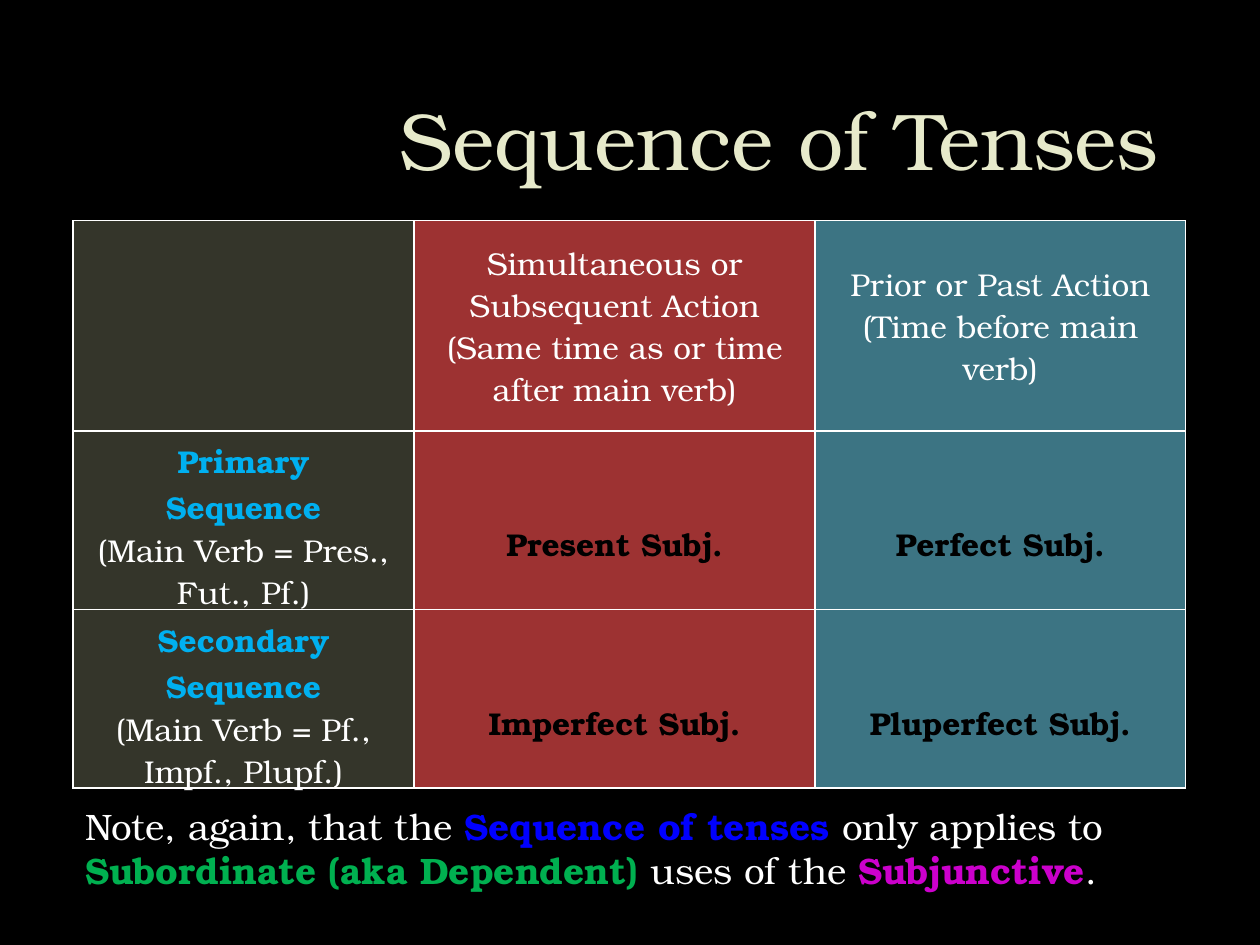
"""Build a slide with a table of the sequence of tenses."""
from dataclasses import dataclass

import pptx
import pptx.dml.color
import pptx.enum.text
import pptx.oxml
import pptx.oxml.ns
import pptx.util
from pptx.util import Cm

RGBColor = pptx.dml.color.RGBColor
Align = pptx.enum.text.PP_ALIGN
Anchor = pptx.enum.text.MSO_ANCHOR

FONT = "TeX Gyre Bonum"
BLACK = RGBColor(0x00, 0x00, 0x00)
WHITE = RGBColor(0xFF, 0xFF, 0xFF)
CREAM = RGBColor(0xE7, 0xEA, 0xCB)
OLIVE = RGBColor(0x34, 0x35, 0x2A)
RED = RGBColor(0x9D, 0x32, 0x32)
TEAL = RGBColor(0x3C, 0x74, 0x83)
SKY = RGBColor(0x00, 0xB0, 0xF0)
BLUE = RGBColor(0x00, 0x00, 0xFF)
GREEN = RGBColor(0x00, 0xB0, 0x50)
MAGENTA = RGBColor(0xCC, 0x00, 0xCC)

COLUMN_FILLS = (OLIVE, RED, TEAL)
COLUMN_WIDTHS = (Cm(6.88), Cm(8.08), Cm(7.47))
ROW_HEIGHTS = (Cm(4.24), Cm(3.6), Cm(3.6))
TENSE_TOP_MARGIN = Cm(1.05)


@dataclass(frozen=True)
class Span:
    text: str
    color: RGBColor = WHITE
    bold: bool = False


@dataclass(frozen=True)
class Sequence:
    name: str
    main_verb: str
    tenses: tuple[str, str]


HEADINGS = (
    (),
    ("Simultaneous or Subsequent Action", "(Same time as or time after main verb)"),
    ("Prior or Past Action", "(Time before main verb)"),
)
SEQUENCES = (
    Sequence("Primary", "(Main Verb = Pres., Fut., Pf.)",
             ("Present Subj.", "Perfect Subj.")),
    Sequence("Secondary", "(Main Verb = Pf., Impf., Plupf.)",
             ("Imperfect Subj.", "Pluperfect Subj.")),
)
NOTE = (
    Span("Note, again, that the "),
    Span("Sequence of tenses ", BLUE, True),
    Span("only applies to "),
    Span("Subordinate (aka Dependent)", GREEN, True),
    Span(" uses of the "),
    Span("Subjunctive", MAGENTA, True),
    Span("."),
)


def write_text(frame, lines, *, size: float, align=Align.LEFT) -> None:
    """Write each line of spans as one paragraph of the frame."""
    frame.word_wrap = True
    for index, line in enumerate(lines):
        para = frame.add_paragraph() if index else frame.paragraphs[0]
        para.alignment = align
        for span in line:
            run = para.add_run()
            run.text = span.text
            run.font.name = FONT
            run.font.size = pptx.util.Pt(size)
            run.font.bold = span.bold
            run.font.color.rgb = span.color


def add_text(page, lines, *, left: Cm, top: Cm, width: Cm, height: Cm,
             size: float, align=Align.LEFT, anchor=Anchor.TOP) -> None:
    """Add a text box with formatted lines."""
    box = page.shapes.add_textbox(left, top, width, height)
    box.text_frame.vertical_anchor = anchor
    write_text(box.text_frame, lines, size=size, align=align)


def format_cell(cell, lines, fill: RGBColor) -> None:
    """Give a cell its white borders, fill and centred text."""
    properties = cell._tc.get_or_add_tcPr()
    for side in "LRTB":
        properties.append(pptx.oxml.parse_xml(
            f'<a:ln{side} {pptx.oxml.ns.nsdecls("a")} w="12700"><a:solidFill>'
            f'<a:srgbClr val="{WHITE}"/></a:solidFill></a:ln{side}>'))
    cell.fill.solid()
    cell.fill.fore_color.rgb = fill
    cell.vertical_anchor = Anchor.MIDDLE
    write_text(cell.text_frame, lines, size=18, align=Align.CENTER)


def add_tense_table(page) -> None:
    """Add the table of sequences and their subjunctive tenses."""
    table = page.shapes.add_table(
        len(ROW_HEIGHTS), len(COLUMN_WIDTHS), Cm(1.47), Cm(4.45),
        sum(COLUMN_WIDTHS), sum(ROW_HEIGHTS)).table
    table.horz_banding = False
    for column, width in zip(table.columns, COLUMN_WIDTHS):
        column.width = width
    for row, height in zip(table.rows, ROW_HEIGHTS):
        row.height = height

    rows = [[[[Span(text)] for text in heading] for heading in HEADINGS]]
    for sequence in SEQUENCES:
        label = [[Span(sequence.name, SKY, True)], [Span("Sequence", SKY, True)],
                 [Span(sequence.main_verb)]]
        rows.append([label, *([[Span(tense, BLACK, True)]] for tense in sequence.tenses)])

    for row_index, row in enumerate(rows):
        for column_index, lines in enumerate(row):
            cell = table.cell(row_index, column_index)
            format_cell(cell, lines, COLUMN_FILLS[column_index])
            if row_index and column_index:
                cell.margin_top = TENSE_TOP_MARGIN


def main() -> None:
    """Build and save the deck."""
    deck = pptx.Presentation()
    deck.slide_width, deck.slide_height = Cm(25.4), Cm(19.05)
    page = deck.slides.add_slide(deck.slide_layouts[6])
    page.background.fill.solid()
    page.background.fill.fore_color.rgb = BLACK
    add_text(page, [[Span("Sequence of Tenses ", CREAM)]], left=Cm(1.27), top=Cm(0.71),
             width=Cm(22.86), height=Cm(3.18), size=46, align=Align.RIGHT,
             anchor=Anchor.BOTTOM)
    add_tense_table(page)
    add_text(page, [NOTE], left=Cm(1.47), top=Cm(16.08), width=Cm(22.86),
             height=Cm(2.06), size=21)
    deck.save("out.pptx")


if __name__ == "__main__":
    main()
